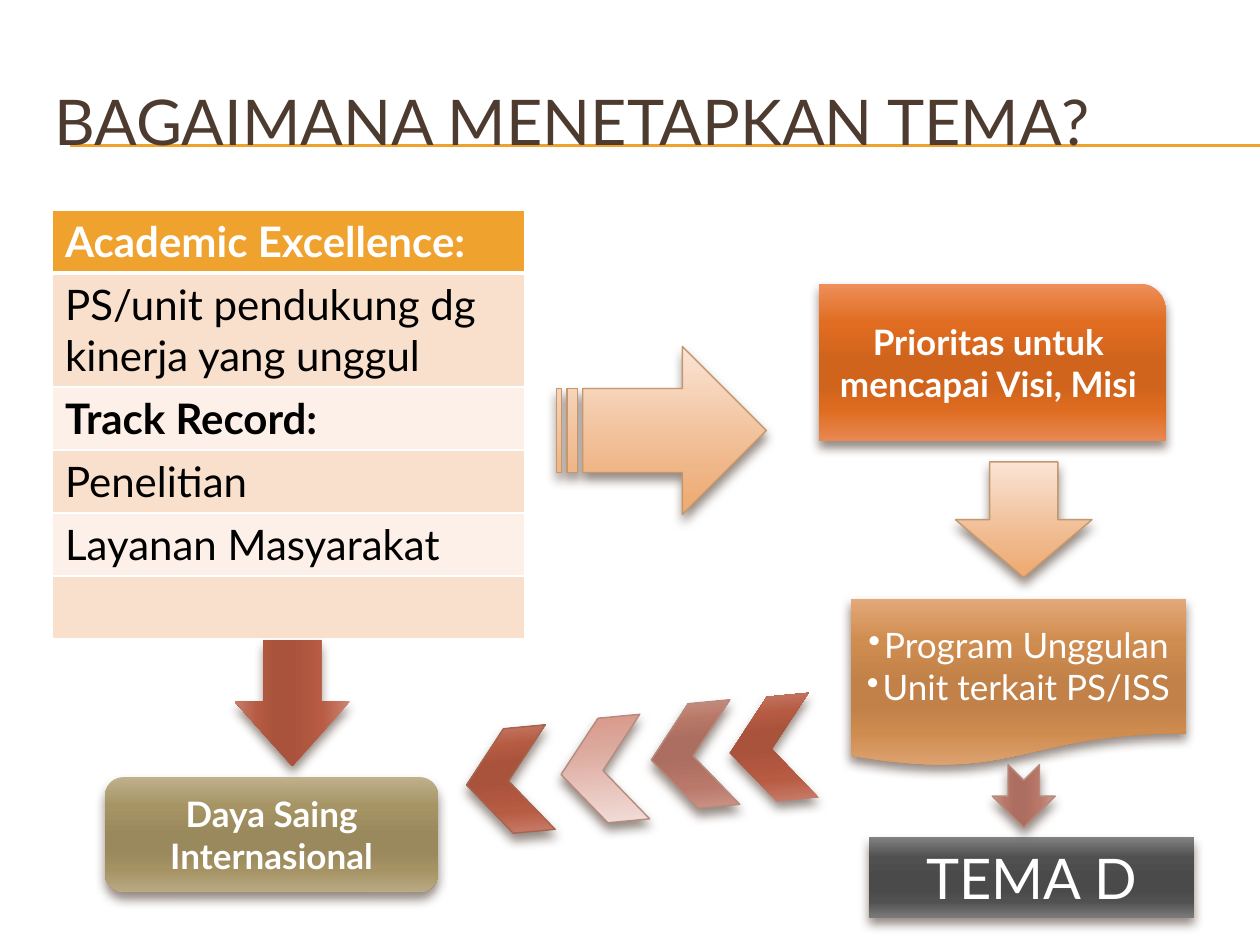
from lxml import etree
from pptx import Presentation
from pptx.dml.color import RGBColor
from pptx.enum import shapes as sh, text as tx
from pptx.oxml import ns
from pptx.util import Pt

FONT = "Lato"
HEX = {
    "white": "FFFFFF", "black": "000000", "brown": "4E3B30",
    "gold": "F0A22E", "peach": "F9E0CD", "cream": "FCF0E8",
    "tan": "C3986D", "rose": "B58B80", "rust": "A5644E",
}
DEEP, SOFT = (0, 25, 50, 65, 80, 100), (0, 72, 100)
GRADS = {
    "rust": "CD8473 B75B42 AA533C AA533C B65B42 C77D6B",
    "olive": "C0B18C A69465 9A895C 9A895C A59364 BAAA85",
    "orange": "EE8F5B E06D21 D0641C D0641C DE6C20 E88852",
    "copper": "E4A97A D08D50 C18148 C18148 CF8C4F DEA372",
    "rose": "D09A8D B97869 AB6E60 AB6E60 B87868 CA9386",
    "gray": "828282 505050 4A4A4A 4A4A4A 505050 7A7A7A",
    "peach": "FAE4D5 EFB688 EFAA6F",
    "pink": "F3E0DB DCA79B D89787",
}
KIND = sh.MSO_SHAPE


def rgb(name):
    return RGBColor.from_string(HEX[name])


def node(root, tag, **attrs):
    return etree.SubElement(root, ns.qn(tag), {k: str(v) for k, v in attrs.items()})


def tint(root, code):
    return node(root, "a:srgbClr", val=code)


def write(par, words, size, color="white", bold=False):
    run = par.add_run()
    run.text = words
    font = run.font
    font.name, font.size, font.bold = FONT, Pt(size), bold
    font.color.rgb = rgb(color)


def blend(shape, name):
    """Fill from top to bottom with the stops of a named gradient."""
    shape.fill.gradient()
    grad = shape.element.spPr.find(ns.qn("a:gradFill"))
    grad.set("rotWithShape", "1")
    for kid in list(grad):
        grad.remove(kid)
    codes = GRADS[name].split()
    stops = node(grad, "a:gsLst")
    for pos, code in zip(DEEP if len(codes) == len(DEEP) else SOFT, codes):
        tint(node(stops, "a:gs", pos=pos * 1000), code)
    node(grad, "a:lin", ang=5400000, scaled=0)


def shade(shape):
    """Drop a soft brown shadow straight down."""
    shape.shadow.inherit = False
    fx = shape.element.spPr.find(ns.qn("a:effectLst"))
    drop = node(fx, "a:outerShdw", blurRad=Pt(6), dist=Pt(4), dir=5400000,
                algn="ctr", rotWithShape=0)
    node(tint(drop, HEX["brown"]), "a:alpha", val=60000)


def add_form(slide, kind, box, grad, line=None, turn=0):
    form = slide.shapes.add_shape(kind, *map(Pt, box))
    form.rotation = turn
    blend(form, grad)
    if line:
        form.line.color.rgb = rgb(line)
        form.line.width = Pt(0.79)
    else:
        form.line.fill.background()
    shade(form)
    return form


def label(form, lines, size=20, bold=False, list_=False):
    frame = form.text_frame
    frame.word_wrap = True
    if list_:
        frame.margin_left = frame.margin_right = 0
    for i, words in enumerate(lines):
        par = frame.add_paragraph() if i else frame.paragraphs[0]
        par.alignment = tx.PP_ALIGN.CENTER
        if list_:
            props = par._p.get_or_add_pPr()
            props.set("marL", str(Pt(9)))
            props.set("indent", str(-Pt(9)))
            node(props, "a:buChar", char="•")
        write(par, words, size, bold=bold)
    return frame


def edge(cell, base):
    """Draw white borders, with the given width at the bottom."""
    props = cell._tc.get_or_add_tcPr()
    for i, (side, width) in enumerate(zip("LRTB", (1, 1, 1, base))):
        line = etree.Element(ns.qn("a:ln" + side), w=str(Pt(width)))
        tint(node(line, "a:solidFill"), HEX["white"])
        props.insert(i, line)


def add_grid(slide):
    rows = [
        ("Academic Excellence:", True),
        ("PS/unit pendukung dg kinerja yang unggul", False),
        ("Track Record:", True),
        ("Penelitian", False),
        ("Layanan Masyarakat", False),
        ("", False),
    ]
    grid = slide.shapes.add_table(len(rows), 1, Pt(30), Pt(120), Pt(270), Pt(245)).table
    for i, (words, bold) in enumerate(rows):
        grid.rows[i].height = Pt(65 if i == 1 else 36)
        cell = grid.cell(i, 0)
        cell.fill.solid()
        cell.fill.fore_color.rgb = rgb(("peach" if i % 2 else "cream") if i else "gold")
        edge(cell, 1 if i else 3)
        if words:
            write(cell.text_frame.paragraphs[0], words, 24,
                  "black" if i else "white", bold)


def add_rule(slide, top):
    rule = slide.shapes.add_connector(sh.MSO_CONNECTOR.STRAIGHT,
                                      Pt(40), Pt(top), Pt(720), Pt(top))
    rule.line.color.rgb = rgb("gold")
    rule.line.width = Pt(0.75)
    node(rule.element.spPr, "a:effectLst")


def set_title(slide, words):
    title = slide.shapes.title
    title.left, title.top, title.width, title.height = map(Pt, (24, 36, 684, 66))
    frame = title.text_frame
    frame.vertical_anchor = tx.MSO_ANCHOR.MIDDLE
    par = frame.paragraphs[0]
    par.alignment = tx.PP_ALIGN.LEFT
    write(par, words, 36, "brown")
    title.element.getparent().append(title.element)  # in front of the rules


def main():
    deck = Presentation()
    deck.slide_width, deck.slide_height = Pt(720), Pt(540)
    slide = deck.slides.add_slide(deck.slide_layouts[5])

    for top in (82.8, 83.5):
        add_rule(slide, top)
    add_grid(slide)

    down = add_form(slide, KIND.RIGHT_ARROW, (131, 368.8, 72, 66), "rust", turn=90)
    down.adjustments[1] = 0.56
    goal = add_form(slide, KIND.ROUNDED_RECTANGLE, (60, 444, 190.5, 66), "olive")
    label(goal, ["Daya Saing Internasional"], bold=True)

    add_form(slide, KIND.STRIPED_RIGHT_ARROW, (318, 198, 120, 96), "peach", "tan")
    aim = add_form(slide, KIND.ROUND_1_RECTANGLE, (468, 162, 198, 90), "orange")
    label(aim, ["Prioritas untuk mencapai Visi, Misi"], bold=True)
    add_form(slide, KIND.DOWN_ARROW, (546, 264, 78, 66), "peach", "tan")
    plan = add_form(slide, KIND.FLOWCHART_DOCUMENT, (486, 342, 192, 96), "copper")
    label(plan, ["Program Unggulan", "Unit terkait PS/ISS"], list_=True)

    for left, top, grad, line in [
        (372, 402, "rose", "rose"), (320.5, 410.3, "pink", "rose"),
        (266.5, 416.3, "rust", "rust"), (417, 398, "rust", None),
    ]:
        add_form(slide, KIND.CHEVRON, (left, top, 48, 60), grad, line, 174.6)

    theme = add_form(slide, KIND.RECTANGLE, (496.5, 478.3, 186, 46), "gray")
    frame = label(theme, ["TEMA D"], 32)
    frame.vertical_anchor = tx.MSO_ANCHOR.TOP
    frame.auto_size = tx.MSO_AUTO_SIZE.SHAPE_TO_FIT_TEXT

    set_title(slide, "BAGAIMANA MENETAPKAN TEMA?")
    add_form(slide, KIND.NOTCHED_RIGHT_ARROW, (567, 437, 36, 36), "rose", "rose", 90)
    deck.save("out.pptx")


if __name__ == "__main__":
    main()
